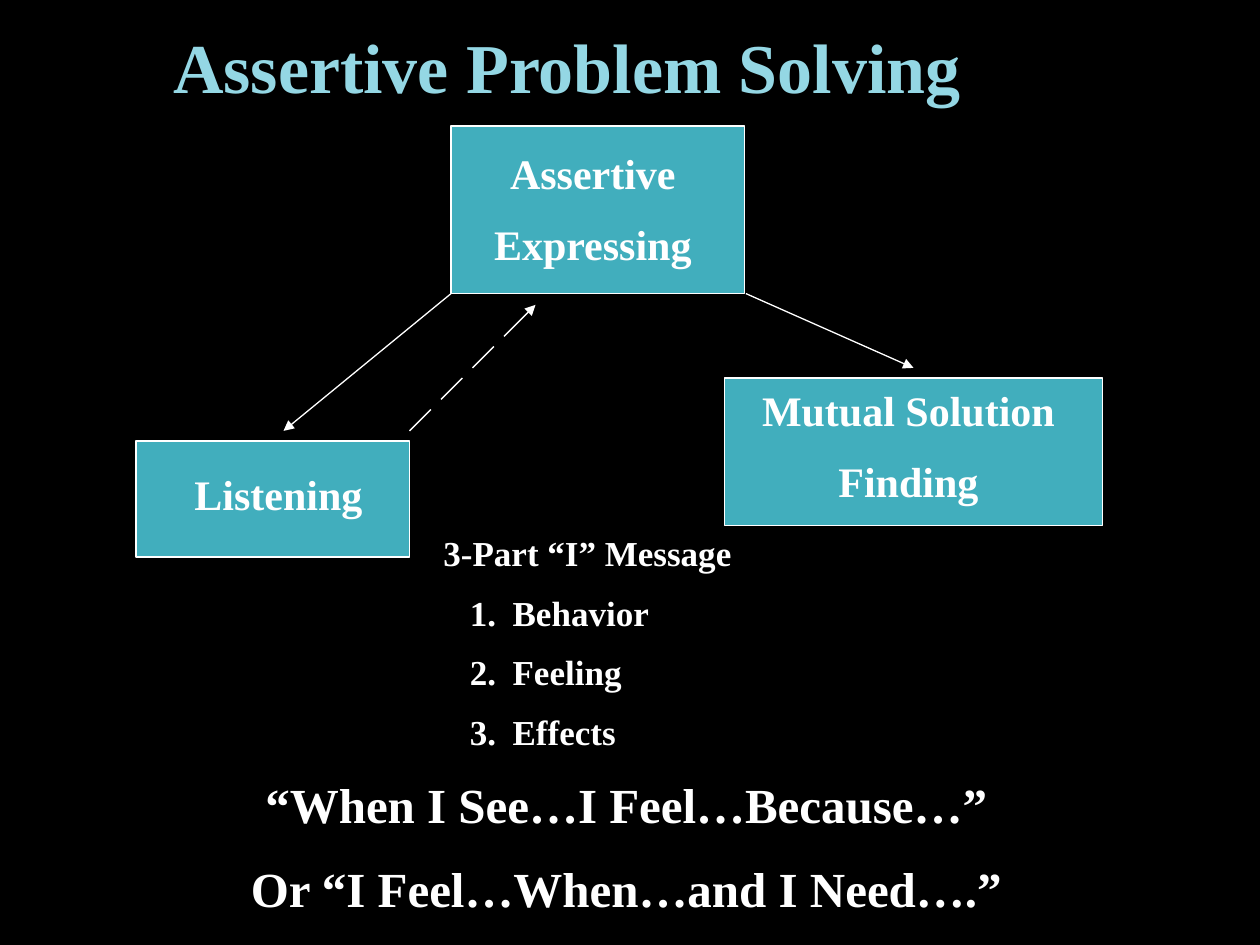
"""Build the Assertive Problem Solving slide."""
import pptx
import pptx.dml.color
import pptx.enum.shapes
import pptx.enum.text
import pptx.oxml.ns
import pptx.util
from lxml import etree

Inches = pptx.util.Inches
Pt = pptx.util.Pt
RGBColor = pptx.dml.color.RGBColor
Align = pptx.enum.text.PP_ALIGN
Anchor = pptx.enum.text.MSO_ANCHOR
qn = pptx.oxml.ns.qn

BLACK = RGBColor(0x00, 0x00, 0x00)
WHITE = RGBColor(0xFF, 0xFF, 0xFF)
TEAL = RGBColor(0x41, 0xAE, 0xBD)
SKY = RGBColor(0x94, 0xD7, 0xE4)


class Deck:
    font = "Times New Roman"
    width = Pt(0.75)

    def __init__(self, slide):
        self.slide = slide
        self.shapes = slide.shapes
        fill = slide.background.fill
        fill.solid()
        fill.fore_color.rgb = BLACK

    def box(self, *area):
        kind = pptx.enum.shapes.MSO_SHAPE.RECTANGLE
        box = self.shapes.add_shape(kind, *map(Inches, area))
        box.shadow.inherit = False
        box.fill.solid()
        box.fill.fore_color.rgb = TEAL
        box.line.color.rgb = WHITE
        box.line.width = self.width

    def text(self, area, lines, size=24, color=WHITE, align=Align.CENTER,
             gap=12, inset=0.05, anchor=Anchor.TOP):
        frame = self.shapes.add_textbox(*map(Inches, area)).text_frame
        frame.word_wrap = True
        frame.vertical_anchor = anchor
        frame.margin_top = frame.margin_bottom = Inches(inset)
        for i, line in enumerate(lines):
            para = frame.add_paragraph() if i else frame.paragraphs[0]
            para.alignment = align
            if i:
                para.space_before = Pt(gap)
            run = para.add_run()
            run.text = line
            run.font.name = self.font
            run.font.size = Pt(size)
            run.font.bold = True
            run.font.color.rgb = color
        return frame

    def number(self, paras):
        for para in paras:
            props = para._p.get_or_add_pPr()
            props.set("marL", str(Inches(0.55)))
            props.set("indent", str(-Inches(0.34)))
            etree.SubElement(props, qn("a:buAutoNum"), type="arabicPeriod")

    def line(self, start, end, arrow=False):
        kind = pptx.enum.shapes.MSO_CONNECTOR.STRAIGHT
        line = self.shapes.add_connector(kind, *map(Inches, start + end))
        line.line.color.rgb = WHITE
        line.line.width = self.width
        if arrow:
            etree.SubElement(line.line._get_or_add_ln(), qn("a:tailEnd"),
                             type="triangle")
        etree.SubElement(line._element.spPr, qn("a:effectLst"))


def main():
    show = pptx.Presentation()
    show.slide_width, show.slide_height = Inches(10), Inches(7.5)
    deck = Deck(show.slides.add_slide(show.slide_layouts[6]))

    deck.text((0, 0.17, 9, 0.7), ["Assertive Problem Solving"], size=40,
              color=SKY, anchor=Anchor.MIDDLE)

    deck.box(3.58, 1, 2.33, 1.33)
    deck.text((3.58, 1.17, 2.25, 1), ["Assertive", "Expressing"], inset=0)
    deck.box(1.08, 3.5, 2.17, 0.92)
    deck.text((1.25, 3.67, 1.92, 0.5), ["Listening"])
    deck.box(5.75, 3, 3, 1.17)
    deck.text((5.75, 3, 2.92, 1.1), ["Mutual Solution", "Finding"])

    parts = deck.text((3.42, 4.17, 2.58, 1.93),
                      ["3-Part “I” Message", "Behavior", "Feeling", "Effects"],
                      size=20, align=Align.LEFT, gap=10)
    deck.number(parts.paragraphs[1:])
    deck.text((1.01, 6.1, 7.92, 1.27),
              ["“When I See…I Feel…Because…”",
               "Or “I Feel…When…and I Need….”"], size=28, gap=14)

    deck.line((3.58, 2.33), (2.25, 3.42), arrow=True)
    for i in range(4):
        last = i == 3
        x, y = 3.25 + 0.25 * i, 3.42 - 0.25 * i
        dash = 0.25 if last else 0.17
        deck.line((x, y), (x + dash, y - dash), arrow=last)
    deck.line((5.92, 2.33), (7.25, 2.92), arrow=True)

    show.save("out.pptx")


if __name__ == "__main__":
    main()
